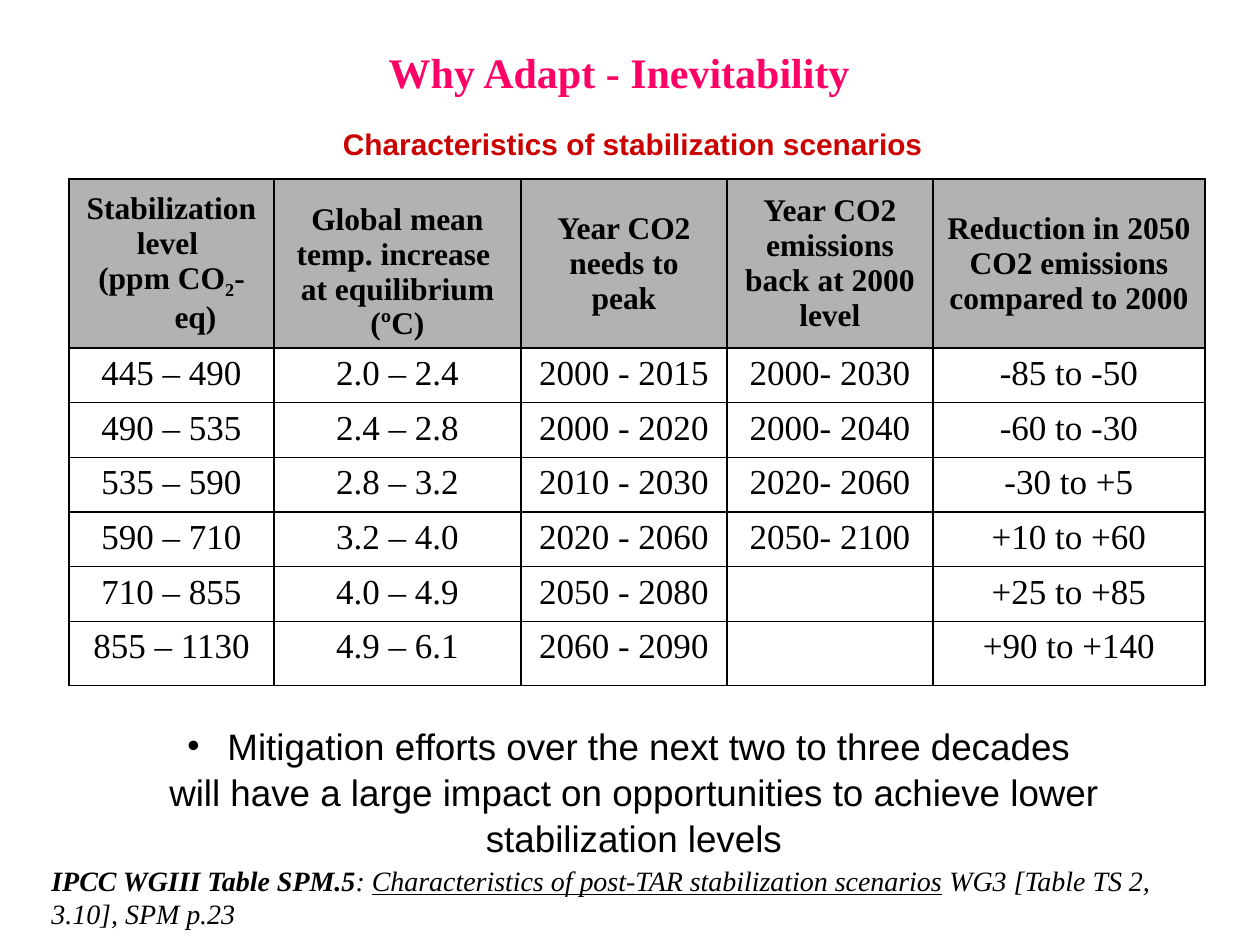
from dataclasses import dataclass

from lxml.etree import SubElement
from pptx import Presentation
from pptx.dml.color import RGBColor
from pptx.enum.text import MSO_ANCHOR, PP_ALIGN
from pptx.oxml.ns import qn
from pptx.util import Emu, Pt


@dataclass(frozen=True)
class Theme:
    serif: str = "Times New Roman"
    sans: str = "Arial"
    title: str = "FF0066"
    subtitle: str = "CC0000"
    text: str = "000000"
    header_fill: str = "B2B2B2"
    body_fill: str = "FFFFFF"
    title_size: int = 24
    subtitle_size: int = 17
    header_size: int = 18
    body_size: int = 20
    message_size: int = 21
    source_size: int = 16
    border_width: int = 1


THEME = Theme()
COLUMN_WIDTHS = (205, 247, 206, 206, 272)
ROW_HEIGHTS = (157, 51, 51, 51, 51, 51, 64)
HANGING_INDENT = 48
HEADERS = (
    "Stabilization\nlevel \n(ppm CO",
    "Global mean temp. increase \nat equilibrium (ºC)",
    "Year CO2 needs to peak",
    "Year CO2 emissions back at 2000 level",
    "Reduction in 2050 CO2 emissions compared to 2000",
)
SCENARIOS = (
    ("445 – 490", "2.0 – 2.4", "2000 - 2015", "2000- 2030", "-85 to -50"),
    ("490 – 535", "2.4 – 2.8", "2000 - 2020", "2000- 2040", "-60 to -30"),
    ("535 – 590", "2.8 – 3.2", "2010 - 2030", "2020- 2060", "-30 to +5"),
    ("590 – 710", "3.2 – 4.0", "2020 - 2060", "2050- 2100", "+10 to +60"),
    ("710 – 855", "4.0 – 4.9", "2050 - 2080", "", "+25 to +85"),
    ("855 – 1130", "4.9 – 6.1", "2060 - 2090", "", "+90 to +140"),
)


def px(length):
    return Emu(round(length * 914400 / 126))


def format_text(text_frame, font_name, size, color, bold=False, align=PP_ALIGN.CENTER):
    for paragraph in text_frame.paragraphs:
        paragraph.alignment = align
        for run in paragraph.runs:
            run.font.name = font_name
            run.font.size = Pt(size)
            run.font.bold = bold
            run.font.color.rgb = RGBColor.from_string(color)


def set_hanging_indent(paragraph, length):
    properties = paragraph._p.get_or_add_pPr()
    properties.set("marL", str(px(length)))
    properties.set("indent", str(-px(length)))
    return properties


def add_text_box(slide, box, text):
    text_frame = slide.shapes.add_textbox(*map(px, box)).text_frame
    text_frame.word_wrap = True
    text_frame.text = text
    return text_frame


def add_title(slide, box):
    text_frame = add_text_box(slide, box, "Why Adapt - Inevitability")
    text_frame.vertical_anchor = MSO_ANCHOR.MIDDLE
    text_frame.margin_top = px(36)
    text_frame.margin_right = px(34)
    format_text(text_frame, THEME.serif, THEME.title_size, THEME.title, bold=True)


def add_subtitle(slide, box):
    text_frame = add_text_box(slide, box, "Characteristics of stabilization scenarios")
    format_text(text_frame, THEME.sans, THEME.subtitle_size, THEME.subtitle, bold=True)


def style_cell(cell, fill):
    """Draw the four borders and then the fill, in schema order."""
    properties = cell._tc.get_or_add_tcPr()
    for side in ("lnL", "lnR", "lnT", "lnB"):
        line = SubElement(properties, qn(f"a:{side}"), w=str(Pt(THEME.border_width)))
        solid = SubElement(line, qn("a:solidFill"))
        SubElement(solid, qn("a:srgbClr"), val=THEME.text)
    cell.fill.solid()
    cell.fill.fore_color.rgb = RGBColor.from_string(fill)


def add_scenario_table(slide, left, top):
    box = (left, top, sum(COLUMN_WIDTHS), sum(ROW_HEIGHTS))
    table = slide.shapes.add_table(
        len(ROW_HEIGHTS), len(COLUMN_WIDTHS), *map(px, box)
    ).table
    table.first_row = table.horz_banding = False
    for column, width in zip(table.columns, COLUMN_WIDTHS):
        column.width = px(width)
    for row, height in zip(table.rows, ROW_HEIGHTS):
        row.height = px(height)

    for row_index, texts in enumerate((HEADERS, *SCENARIOS)):
        is_header = row_index == 0
        for column_index, text in enumerate(texts):
            cell = table.cell(row_index, column_index)
            cell.text_frame.text = text
            if is_header:
                cell.vertical_anchor = MSO_ANCHOR.MIDDLE
            style_cell(cell, THEME.header_fill if is_header else THEME.body_fill)
            if column_index == 0 or not is_header:
                for paragraph in cell.text_frame.paragraphs:
                    set_hanging_indent(paragraph, HANGING_INDENT)
            if is_header and column_index == 0:
                unit = cell.text_frame.paragraphs[-1]
                subscript = unit.add_run()
                subscript.text = "2"
                subscript.font._element.set("baseline", "-25000")
                unit.add_run().text = "-eq)"
            size = THEME.header_size if is_header else THEME.body_size
            format_text(cell.text_frame, THEME.serif, size, THEME.text, bold=is_header)
    table.cell(0, 1).vertical_anchor = MSO_ANCHOR.BOTTOM


def add_message(slide, box):
    text_frame = add_text_box(
        slide,
        box,
        " Mitigation efforts over the next two to three decades \n"
        "will have a large impact on opportunities to achieve lower stabilization levels",
    )
    text_frame.margin_top = px(0)
    format_text(text_frame, THEME.sans, THEME.message_size, THEME.text)
    for paragraph in text_frame.paragraphs:
        paragraph.line_spacing = 1.04
    properties = set_hanging_indent(text_frame.paragraphs[0], 30)
    SubElement(properties, qn("a:buSzPct"), val="95000")
    SubElement(properties, qn("a:buFont"), typeface=THEME.sans)
    SubElement(properties, qn("a:buChar"), char="•")


def add_source(slide, box):
    text_frame = add_text_box(slide, box, "IPCC WGIII Table SPM.5")
    paragraph = text_frame.paragraphs[0]
    for text in (
        ": ",
        "Characteristics of post-TAR stabilization scenarios",
        " WG3 [Table TS 2, 3.10], SPM p.23",
    ):
        paragraph.add_run().text = text
    format_text(
        text_frame, THEME.serif, THEME.source_size, THEME.text, align=PP_ALIGN.LEFT
    )
    for run in paragraph.runs:
        run.font.italic = True
    reference, _, table_title, _ = paragraph.runs
    reference.font.bold = True
    table_title.font.underline = True


def main():
    presentation = Presentation()
    presentation.slide_width = px(1260)
    presentation.slide_height = px(945)
    slide = presentation.slides.add_slide(presentation.slide_layouts[6])
    add_title(slide, (0, 0, 1260, 113))
    add_scenario_table(slide, 69, 179)
    add_message(slide, (64, 722, 1140, 138))
    add_subtitle(slide, (66, 120, 1134, 48))
    add_source(slide, (39, 857, 1189, 81))
    presentation.save("out.pptx")


if __name__ == "__main__":
    main()
